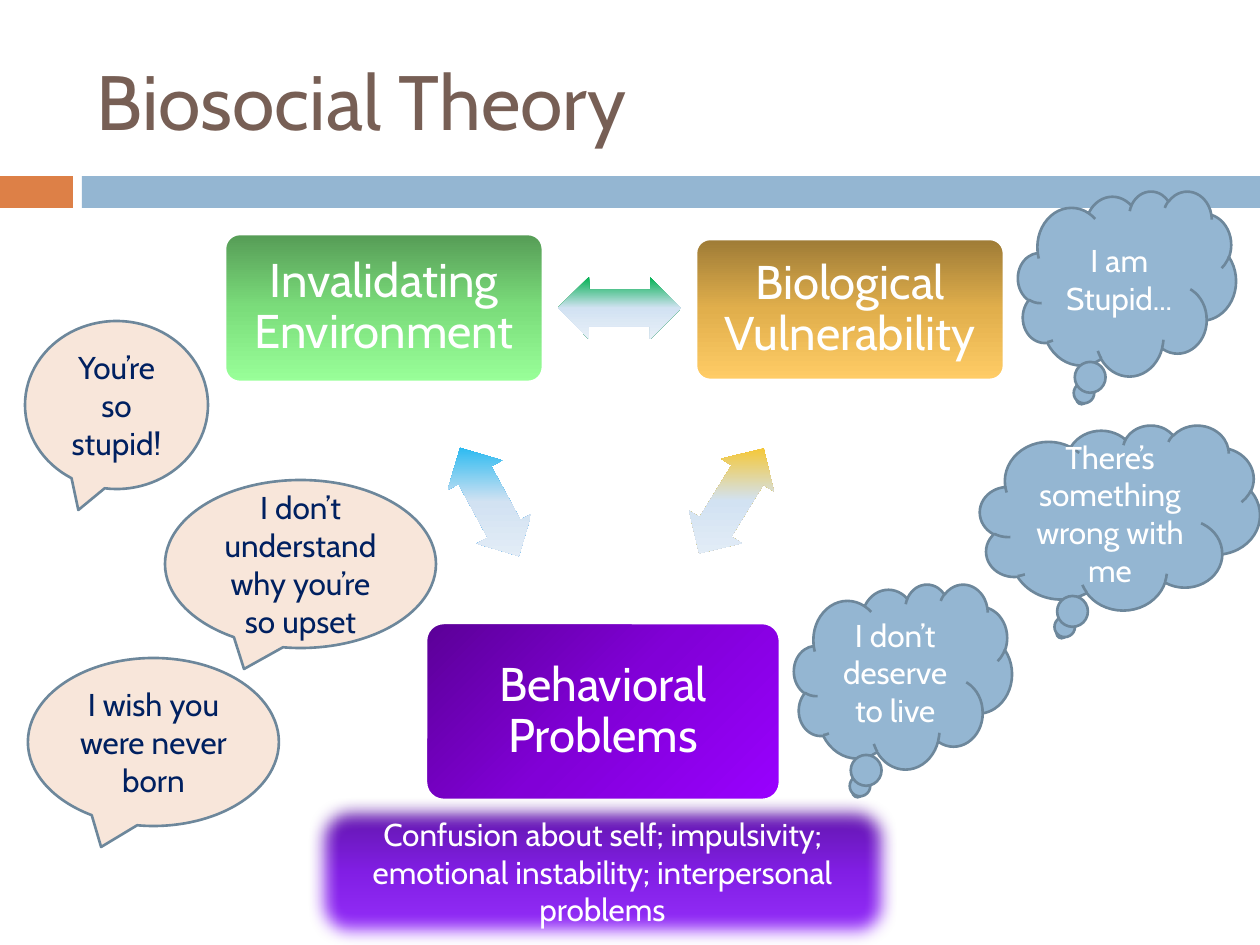
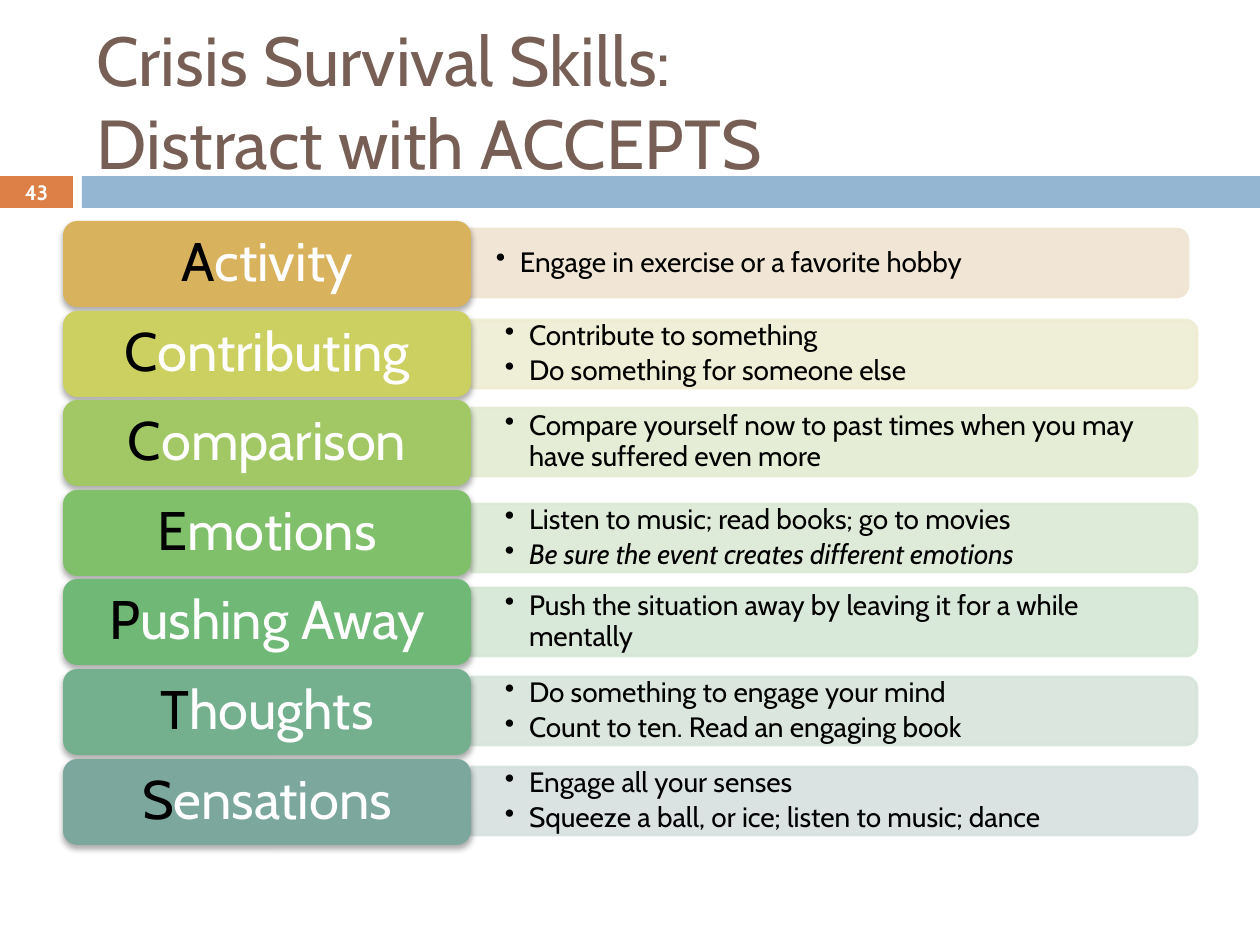
from dataclasses import dataclass
from typing import NamedTuple

from lxml.etree import SubElement
from pptx import Presentation
from pptx.dml.color import RGBColor
from pptx.enum.shapes import MSO_SHAPE
from pptx.enum.text import MSO_ANCHOR, MSO_AUTO_SIZE, PP_ALIGN
from pptx.oxml.ns import qn
from pptx.shapes.autoshape import Shape
from pptx.slide import Slide
from pptx.text.text import TextFrame
from pptx.util import Emu, Pt

PX_PER_INCH = 126
FONT = "Cabin"
WHITE, BLACK, NAVY = "FFFFFF", "000000", "002060"
BROWN, ORANGE, BLUE, SLATE, PEACH = "775F55", "DD8047", "94B6D2", "6D879B", "F8E6DA"
ROUNDED = MSO_SHAPE.ROUNDED_RECTANGLE


class Box(NamedTuple):
    left: int
    top: int
    width: int
    height: int


@dataclass
class Factor:
    text: str
    box: Box
    stops: tuple[str, str, str]
    angle: int = 90


@dataclass
class Arrow:
    box: Box
    rotation: float
    color: str


@dataclass
class Callout:
    text: str
    box: Box


@dataclass
class Skill:
    name: str
    color: str
    tint: str
    middle: int
    tips: tuple[str, ...]
    italic_tip: int = -1
    bar_left: int = 471


FACTORS = [
    Factor("Invalidating Environment", Box(225, 234, 318, 148), ("569C56", "7BDD7B", "99FF99")),
    Factor("Behavioral Problems", Box(426, 623, 354, 177), ("5B0097", "8100D7", "9900FF"), 45),
    Factor("Biological Vulnerability", Box(696, 239, 308, 141), ("9E7B36", "E1AF4C", "FFCC66")),
]
ARROWS = [
    Arrow(Box(428, 471, 123, 62), 61.5, "00B0F0"),
    Arrow(Box(670, 470, 123, 62), 301.6, "FFC000"),
    Arrow(Box(558, 277, 123, 62), 180.2, "00B050"),
]
THOUGHTS = [
    Callout("I am Stupid...", Box(1018, 191, 218, 185)),
    Callout("There’s something wrong with me", Box(980, 425, 280, 185)),
    Callout("I don’t deserve to live", Box(794, 584, 218, 185)),
]
REMARKS = [
    Callout("You’re so stupid!", Box(25, 321, 183, 168)),
    Callout("I don’t understand why you’re so upset", Box(165, 480, 271, 168)),
    Callout("I wish you were never born", Box(28, 658, 251, 168)),
]
SYMPTOMS = Factor(
    "Confusion about self; impulsivity; emotional instability; interpersonal problems",
    Box(309, 798, 587, 147), ("5B15A0", "811EE4", "9933FF"))
SKILLS = [
    Skill("Activity", "D8B25C", "F0E4D2", 263,
          ("Engage in exercise or a favorite hobby",), bar_left=462),
    Skill("Contributing", "CCD061", "EEEDD2", 354,
          ("Contribute to something", "Do something for someone else")),
    Skill("Comparison", "A2C866", "E4ECD3", 442,
          ("Compare yourself now to past times when you may have suffered even more",)),
    Skill("Emotions", "81C06B", "DBE9D4", 538,
          ("Listen to music; read books; go to movies",
           "Be sure the event creates different emotions"), italic_tip=1),
    Skill("Pushing Away", "70B876", "D5E7D5", 622,
          ("Push the situation away by leaving it for a while mentally",)),
    Skill("Thoughts", "75B08E", "D6E4DB", 711,
          ("Do something to engage your mind", "Count to ten. Read an engaging book")),
    Skill("Sensations", "7BA79D", "D7E1DF", 801,
          ("Engage all your senses", "Squeeze a ball, or ice; listen to music; dance")),
]
CARD_TOP, CARD_PITCH = 221, 89.6
BAR_WIDTH, BAR_HEIGHT = 726, 68


# Measures, colours and text
def px(value: float) -> Emu:
    return Emu(round(value * 914400 / PX_PER_INCH))


def place(box: Box) -> tuple[Emu, Emu, Emu, Emu]:
    return px(box.left), px(box.top), px(box.width), px(box.height)


def rgb(color: str) -> RGBColor:
    return RGBColor.from_string(color)


def style_text(frame: TextFrame, size: float, color: str, align: PP_ALIGN = PP_ALIGN.CENTER,
               spacing: float = 1.0) -> None:
    frame.word_wrap = True
    frame.auto_size = MSO_AUTO_SIZE.NONE
    frame.vertical_anchor = MSO_ANCHOR.MIDDLE
    for para in frame.paragraphs:
        para.alignment = align
        para.line_spacing = spacing
        for span in para.runs:
            span.font.name = FONT
            span.font.size = Pt(size)
            span.font.color.rgb = rgb(color)


def set_insets(frame: TextFrame, sides: int, ends: int) -> None:
    frame.margin_left = frame.margin_right = px(sides)
    frame.margin_top = frame.margin_bottom = px(ends)


def add_bullet(para) -> None:
    properties = para._p.get_or_add_pPr()
    properties.set("marL", str(px(24)))
    properties.set("indent", str(-px(24)))
    SubElement(properties, qn("a:buChar"), char="•")


# Shapes and effects
def add_box(page: Slide, kind: MSO_SHAPE, box: Box, fill: str = "", line: str = "") -> Shape:
    shape = page.shapes.add_shape(kind, *place(box))
    shape.shadow.inherit = False
    if fill:
        shape.fill.solid()
        shape.fill.fore_color.rgb = rgb(fill)
    if line:
        shape.line.color.rgb = rgb(line)
        shape.line.width = Pt(1.5)
    else:
        shape.line.fill.background()
    return shape


def fill_gradient(shape: Shape, stops: tuple[str, str, str], angle: int = 90) -> None:
    shape.fill.gradient()
    shape.fill.gradient_angle = 360 - angle
    gradient = shape._element.spPr.find(qn("a:gradFill"))
    gradient.set("rotWithShape", "0")
    stop_list = gradient.find(qn("a:gsLst"))
    for old_stop in list(stop_list):
        stop_list.remove(old_stop)
    for position, color in zip((0, 50000, 100000), stops):
        stop = SubElement(stop_list, qn("a:gs"), pos=str(position))
        SubElement(stop, qn("a:srgbClr"), val=color)


def add_effect(shape: Shape, tag: str, **values: str):
    return SubElement(shape._element.spPr.find(qn("a:effectLst")), qn(tag), **values)


def add_shadow(shape: Shape) -> None:
    shadow = add_effect(shape, "a:outerShdw", blurRad=str(Pt(3.5)), dist=str(Pt(2.2)),
                        dir="5400000", rotWithShape="0")
    color = SubElement(shadow, qn("a:srgbClr"), val=BLACK)
    SubElement(color, qn("a:alpha"), val="32000")


def set_opacity(shape: Shape, percent: int) -> None:
    for color in shape._element.spPr.iter(qn("a:srgbClr")):
        SubElement(color, qn("a:alpha"), val=str(percent * 1000))


# Title and bands that both slides share
def add_page(deck, title: str, size: float, number: str = "") -> Slide:
    page = deck.slides.add_slide(deck.slide_layouts[5])
    heading = page.shapes.title
    heading.left, heading.top, heading.width, heading.height = place(Box(84, 32, 1124, 136))
    heading.text_frame.text = title
    style_text(heading.text_frame, size, BROWN, PP_ALIGN.LEFT)
    marker = add_box(page, MSO_SHAPE.RECTANGLE, Box(0, 176, 73, 32), ORANGE)
    add_box(page, MSO_SHAPE.RECTANGLE, Box(82, 176, 1178, 32), BLUE)
    if number:
        marker.text_frame.text = number
        style_text(marker.text_frame, 11.9, WHITE)
        marker.text_frame.paragraphs[0].runs[0].font.bold = True
    return page


# Biosocial theory
def add_factor(page: Slide, factor: Factor) -> None:
    shape = add_box(page, ROUNDED, factor.box, line=WHITE)
    shape.adjustments[0] = 0.1
    fill_gradient(shape, factor.stops, factor.angle)
    shape.text_frame.text = factor.text
    set_insets(shape.text_frame, 14, 14)
    style_text(shape.text_frame, 27, WHITE, spacing=0.9)


def add_arrow(page: Slide, arrow: Arrow) -> None:
    shape = add_box(page, MSO_SHAPE.LEFT_RIGHT_ARROW, arrow.box)
    shape.adjustments[0] = 0.6
    shape.adjustments[1] = 0.5
    shape.rotation = arrow.rotation
    fill_gradient(shape, (arrow.color, "D2E2F2", "E8F0F8"))


def add_callout(page: Slide, kind: MSO_SHAPE, callout: Callout, fill: str, color: str) -> None:
    shape = add_box(page, kind, callout.box, fill, SLATE)
    shape.text_frame.text = callout.text
    style_text(shape.text_frame, 18, color)


def add_symptoms(page: Slide, symptoms: Factor) -> None:
    shape = add_box(page, ROUNDED, symptoms.box, line=BROWN)
    fill_gradient(shape, symptoms.stops, symptoms.angle)
    add_effect(shape, "a:softEdge", rad=str(Pt(10)))
    shape.text_frame.text = symptoms.text
    style_text(shape.text_frame, 18, WHITE)


def build_theory(deck) -> None:
    page = add_page(deck, "Biosocial Theory", 44)
    for factor in FACTORS:
        add_factor(page, factor)
    for arrow in ARROWS:
        add_arrow(page, arrow)
    for thought in THOUGHTS:
        add_callout(page, MSO_SHAPE.CLOUD_CALLOUT, thought, BLUE, WHITE)
    for remark in REMARKS:
        add_callout(page, MSO_SHAPE.OVAL_CALLOUT, remark, PEACH, NAVY)
    add_symptoms(page, SYMPTOMS)


# Crisis survival skills
def add_tips(page: Slide, skill: Skill) -> None:
    # The bar is an upright shape turned by 90 degrees about its centre
    center = skill.bar_left + BAR_WIDTH // 2
    upright = Box(center - BAR_HEIGHT // 2, skill.middle - BAR_WIDTH // 2, BAR_HEIGHT, BAR_WIDTH)
    bar = add_box(page, MSO_SHAPE.ROUND_2_SAME_RECTANGLE, upright, skill.tint, skill.tint)
    bar.rotation = 90
    set_opacity(bar, 90)

    text_box = Box(skill.bar_left, skill.middle - 31, BAR_WIDTH - 4, 62)
    frame = page.shapes.add_textbox(*place(text_box)).text_frame
    frame.text = "\n".join(skill.tips)
    set_insets(frame, 34, 0)
    style_text(frame, 16, BLACK, PP_ALIGN.LEFT, 0.9)
    for index, para in enumerate(frame.paragraphs):
        para.space_after = Pt(2.4)
        add_bullet(para)
        if index == skill.italic_tip:
            para.runs[0].font.italic = True


def add_card(page: Slide, skill: Skill, top: int) -> None:
    card = add_box(page, ROUNDED, Box(63, top, 408, 86), skill.color)
    add_shadow(card)
    para = card.text_frame.paragraphs[0]
    para.text = skill.name[0]
    para.add_run().text = skill.name[1:]
    set_insets(card.text_frame, 16, 8)
    style_text(card.text_frame, 31, WHITE, spacing=0.9)
    para.runs[0].font.color.rgb = rgb(BLACK)


def build_skills(deck) -> None:
    page = add_page(deck, "Crisis Survival Skills:\vDistract with ACCEPTS", 39.6, "43")
    for row, skill in enumerate(SKILLS):
        add_tips(page, skill)
        add_card(page, skill, round(CARD_TOP + row * CARD_PITCH))


def main() -> None:
    deck = Presentation()
    deck.slide_width, deck.slide_height = px(1260), px(945)
    build_theory(deck)
    build_skills(deck)
    deck.save("out.pptx")


if __name__ == "__main__":
    main()
